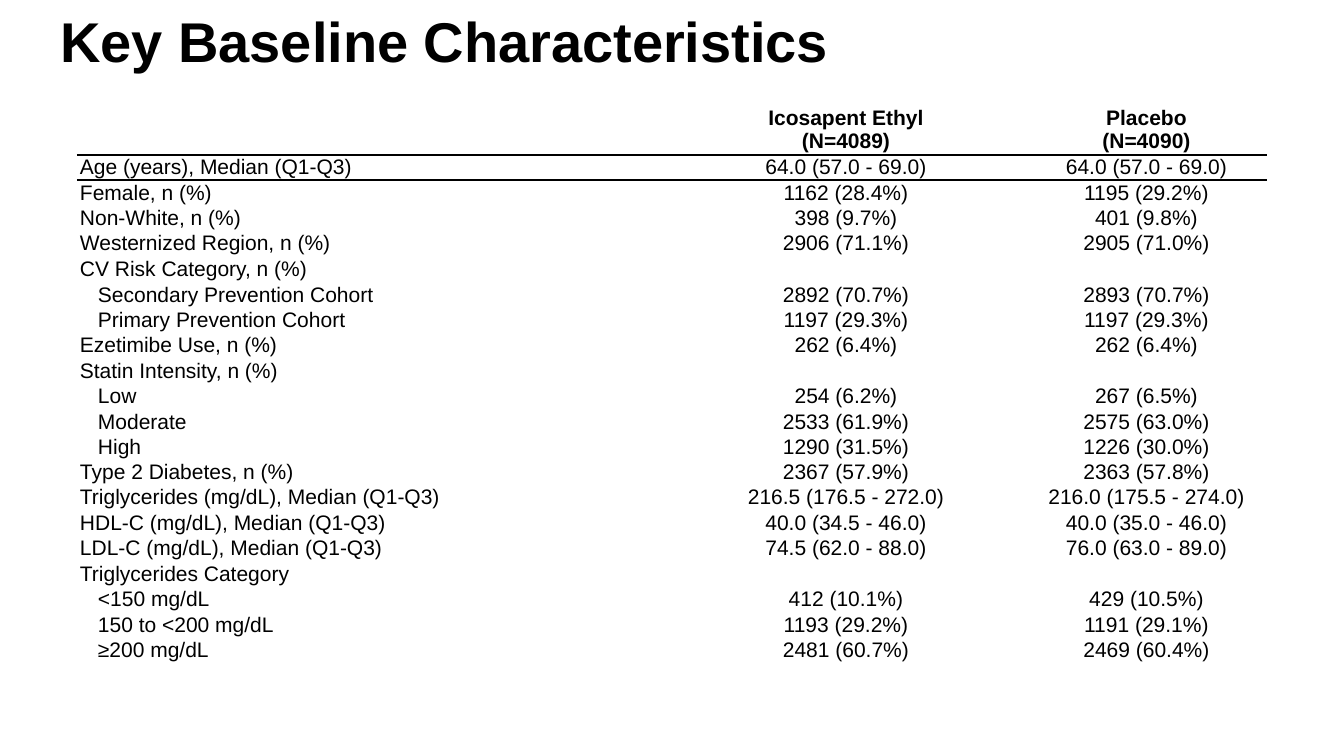
from lxml.etree import SubElement
from pptx import Presentation
from pptx.dml.color import RGBColor
from pptx.enum.text import MSO_ANCHOR as Anchor, MSO_AUTO_SIZE as Fit, PP_ALIGN as Align
from pptx.oxml import parse_xml
from pptx.oxml.ns import nsdecls, qn
from pptx.util import Pt

SCALE = 914400 / 100.8
INK, PAPER = "000000", "FFFFFF"
PLAIN = "{2D5ABB26-0587-4C30-8999-92F81FD0307C}"  # no style, no grid
COLS = (589, 360, 241)
HEAD = 51
INDENT = 18

# Label, drug, placebo, indent level
ROWS = [
    ("Age (years), Median (Q1-Q3)", "64.0 (57.0 - 69.0)", "64.0 (57.0 - 69.0)", 0),
    ("Female, n (%)", "1162 (28.4%)", "1195 (29.2%)", 0),
    ("Non-White, n (%)", "398 (9.7%)", "401 (9.8%)", 0),
    ("Westernized Region, n (%)", "2906 (71.1%)", "2905 (71.0%)", 0),
    ("CV Risk Category, n (%)", "", "", 0),
    ("Secondary Prevention Cohort", "2892 (70.7%)", "2893 (70.7%)", 1),
    ("Primary Prevention Cohort", "1197 (29.3%)", "1197 (29.3%)", 1),
    ("Ezetimibe Use, n (%)", "262 (6.4%)", "262 (6.4%)", 0),
    ("Statin Intensity, n (%)", "", "", 0),
    ("Low", "254 (6.2%)", "267 (6.5%)", 1),
    ("Moderate", "2533 (61.9%)", "2575 (63.0%)", 1),
    ("High", "1290 (31.5%)", "1226 (30.0%)", 1),
    ("Type 2 Diabetes, n (%)", "2367 (57.9%)", "2363 (57.8%)", 0),
    ("Triglycerides (mg/dL), Median (Q1-Q3)", "216.5 (176.5 - 272.0)",
     "216.0 (175.5 - 274.0)", 0),
    ("HDL-C (mg/dL), Median (Q1-Q3)", "40.0 (34.5 - 46.0)", "40.0 (35.0 - 46.0)", 0),
    ("LDL-C (mg/dL), Median (Q1-Q3)", "74.5 (62.0 - 88.0)", "76.0 (63.0 - 89.0)", 0),
    ("Triglycerides Category", "", "", 0),
    ("<150 mg/dL", "412 (10.1%)", "429 (10.5%)", 1),
    ("150 to <200 mg/dL", "1193 (29.2%)", "1191 (29.1%)", 1),
    ("≥200 mg/dL", "2481 (60.7%)", "2469 (60.4%)", 1),
]
TOP = ("", "Icosapent Ethyl\v(N=4089)", "Placebo\v(N=4090)", 0)


def px(n):
    return round(n * SCALE)


def tint(code):
    return RGBColor.from_string(code)


def style(item, **values):
    for key, value in values.items():
        setattr(item, key, value)


def write(para, text, size, bold, align):
    para.text = text
    para.alignment = align
    for run in para.runs:
        style(run.font, name="Arial", size=Pt(size), bold=bold)
        run.font.color.rgb = tint(INK)
    # Breaks and empty cells need the size too
    marks = [SubElement(br, qn("a:rPr")) for br in para._p.findall(qn("a:br"))]
    if not text:
        marks.append(SubElement(para._p, qn("a:endParaRPr")))
    for mark in marks:
        mark.set("sz", str(size * 100))


def rule(cell, side):
    cell._tc.get_or_add_tcPr().insert(0, parse_xml(
        f'<a:{side} {nsdecls("a")} w="{Pt(1.5)}"><a:solidFill>'
        f'<a:srgbClr val="{INK}"/></a:solidFill></a:{side}>'))


def add_title(slide, x, y, w, h):
    title = slide.shapes.title
    style(title, left=px(x), top=px(y), width=px(w), height=px(h))
    frame = title.text_frame
    style(frame, word_wrap=True, auto_size=Fit.NONE, vertical_anchor=Anchor.MIDDLE)
    para = frame.paragraphs[0]
    write(para, "Key Baseline Characteristics", 40, True, Align.LEFT)
    para.line_spacing = 0.9


def add_grid(slide, x, y, w, h):
    lines = [TOP] + ROWS
    grid = slide.shapes.add_table(
        len(lines), len(COLS), px(x), px(y), px(w), px(h)).table
    style(grid, first_row=False, horz_banding=False)
    grid._tbl.tblPr.find(qn("a:tableStyleId")).text = PLAIN
    for col, wide in zip(grid.columns, COLS):
        col.width = px(wide)
    for r, (*texts, level) in enumerate(lines):
        head = r == 0
        grid.rows[r].height = px(HEAD if head else (h - HEAD) / len(ROWS))
        for c, text in enumerate(texts):
            cell = grid.cell(r, c)
            style(cell, margin_left=px(3), margin_right=px(3), margin_top=0,
                  margin_bottom=px(2 if head else 0),
                  vertical_anchor=Anchor.BOTTOM if head else Anchor.MIDDLE)
            para = cell.text_frame.paragraphs[0]
            write(para, text, 15, head, Align.CENTER if c else Align.LEFT)
            if level and c == 0:
                para._p.get_or_add_pPr().set("marL", str(px(INDENT)))
            if head:
                cell.fill.background()
            else:
                cell.fill.solid()
                cell.fill.fore_color.rgb = tint(PAPER)
            # Line between the heading and the body
            if r < 2:
                rule(cell, "lnB" if head else "lnT")


def main():
    deck = Presentation()
    style(deck, slide_width=px(1344), slide_height=px(756))
    slide = deck.slides.add_slide(deck.slide_layouts[5])
    add_title(slide, 50, -1, 1159, 91)
    add_grid(slide, 77, 104, sum(COLS), 558)
    deck.save("out.pptx")


if __name__ == "__main__":
    main()
